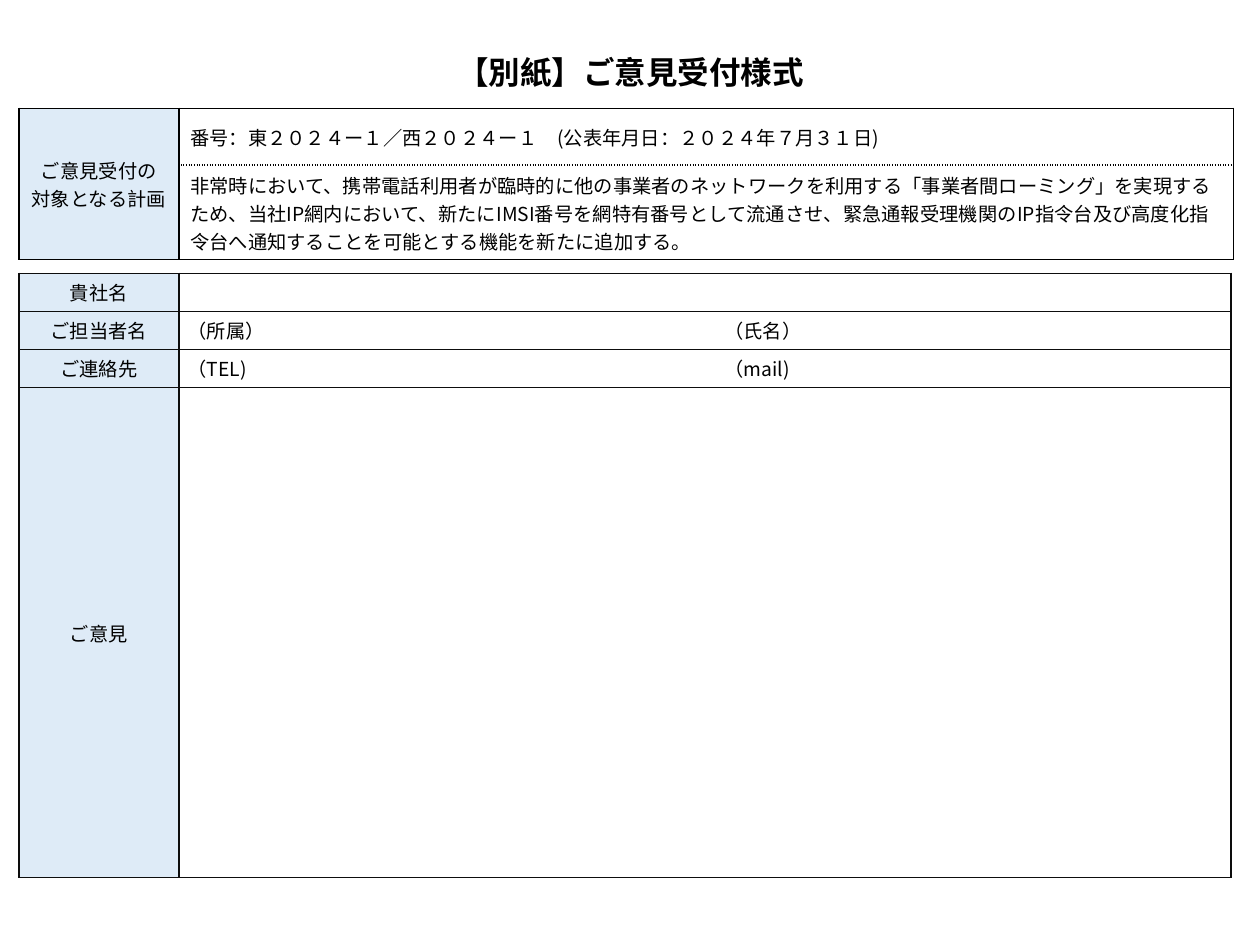
import pptx
import pptx.util
import pptx.dml.color
import pptx.enum.text
import pptx.oxml.ns
from dataclasses import dataclass
from lxml import etree

Inches, Pt = pptx.util.Inches, pptx.util.Pt
RGB = pptx.dml.color.RGBColor.from_string
PP_ALIGN = pptx.enum.text.PP_ALIGN
MIDDLE = pptx.enum.text.MSO_ANCHOR.MIDDLE
qn = pptx.oxml.ns.qn


@dataclass(frozen=True)
class Theme:
    font: str = "Noto Sans CJK JP"
    text: str = "000000"
    label_fill: str = "DEEBF7"
    plan_line: str = "000000"
    form_line: str = "0D0D0D"
    title_size: int = 18
    body_size: int = 11
    no_style: str = "{2D5ABB26-0587-4C30-8999-92F81FD0307C}"


theme = Theme()


def style_text(tf, size, align, bold=False):
    for p in tf.paragraphs:
        p.alignment = align
        p.font.size = Pt(size)
        p.font.bold = bold
        p.font.name = theme.font
        p.font.color.rgb = RGB(theme.text)
        props = p.font._element
        etree.SubElement(props, qn("a:ea"), typeface=theme.font)
        if not p.runs:
            etree.SubElement(p._p, qn("a:endParaRPr"), sz=str(size * 100))


def add_grid(left, top, cols, rows, texts, margins, line, spans, special):
    """Add a bordered table; special maps (row, column, side) to a dash or None."""
    frame = s.shapes.add_table(len(rows), len(cols), Inches(left), Inches(top),
                               Inches(sum(cols)), Inches(sum(rows)))
    table = frame.table
    table.first_row = table.horz_banding = False
    table._tbl.tblPr.find(qn("a:tableStyleId")).text = theme.no_style
    for column, width in zip(table.columns, cols):
        column.width = Inches(width)
    for row, height in zip(table.rows, rows):
        row.height = Inches(height)
    for first, last in spans:
        table.cell(*first).merge(table.cell(*last))
    for r, row_texts in enumerate(texts):
        for c, text in enumerate(row_texts):
            cell = table.cell(r, c)
            cell.text = text
            cell.vertical_anchor = MIDDLE
            cell.margin_left = cell.margin_right = Inches(margins[0])
            cell.margin_top = cell.margin_bottom = Inches(margins[1])
            style_text(cell.text_frame, theme.body_size,
                       PP_ALIGN.LEFT if c else PP_ALIGN.CENTER)
            tc_pr = cell._tc.get_or_add_tcPr()
            for side in "LRTB":
                dash = special.get((r, c, side), "solid")
                ln = etree.SubElement(tc_pr, qn(f"a:ln{side}"), w=str(Pt(1)))
                if dash is None:
                    etree.SubElement(ln, qn("a:noFill"))
                    continue
                fill = etree.SubElement(ln, qn("a:solidFill"))
                etree.SubElement(fill, qn("a:srgbClr"), val=line)
                etree.SubElement(ln, qn("a:prstDash"), val=dash)
            if c:
                cell.fill.background()
            else:
                cell.fill.solid()
                cell.fill.fore_color.rgb = RGB(theme.label_fill)


prs = pptx.Presentation()
prs.slide_width, prs.slide_height = Inches(10), Inches(7.5)
s = prs.slides.add_slide(prs.slide_layouts[6])

# Reply form: the two answer columns have no line between them
open_sides = {(r, c, side): None for r in (1, 2, 3) for c, side in ((1, "R"), (2, "L"))}
add_grid(0.15, 2.17, [1.27, 4.26, 4.09], [0.26, 0.26, 0.26, 3.89],
         [["貴社名", "", ""],
          ["ご担当者名", "（所属）", "（氏名）"],
          ["ご連絡先", "（TEL)", "（mail)"],
          ["ご意見", "", ""]],
         (0.07, 0.04), theme.form_line, [((0, 1), (0, 2))], open_sides)

# Title
title = s.shapes.add_textbox(Inches(0.85), Inches(0.35), Inches(8.31), Inches(0.44))
tf = title.text_frame
tf.word_wrap = True
tf.vertical_anchor = MIDDLE
tf.text = "【別紙】ご意見受付様式"
style_text(tf, theme.title_size, PP_ALIGN.CENTER, bold=True)

# Plan open for comments: number above a dotted line, summary below it
add_grid(0.15, 0.86, [1.27, 8.37], [0.45, 0.75],
         [["ご意見受付の\n対象となる計画",
           "番号：東２０２４ー１／西２０２４ー１　(公表年月日：２０２４年７月３１日)"],
          ["",
           "非常時において、携帯電話利用者が臨時的に他の事業者のネットワークを利用する"
           "「事業者間ローミング」を実現するため、当社IP網内において、新たにIMSI番号を"
           "網特有番号として流通させ、緊急通報受理機関のIP指令台及び高度化指令台へ"
           "通知することを可能とする機能を新たに追加する。"]],
         (0.09, 0.05), theme.plan_line, [((0, 0), (1, 0))],
         {(0, 1, "B"): "sysDot", (1, 1, "T"): "sysDot"})

prs.save("out.pptx")
